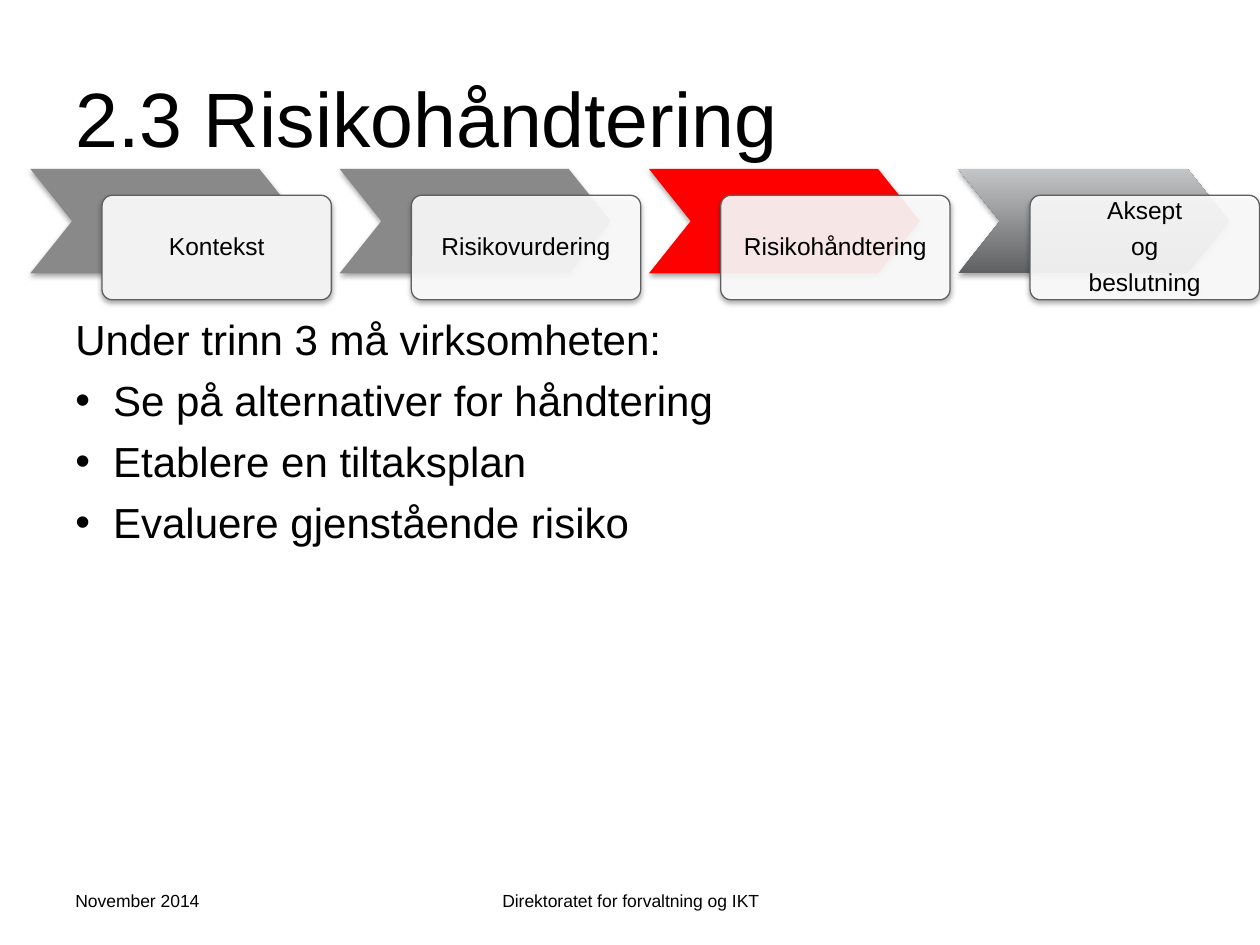
from lxml import etree
from pptx import Presentation
from pptx.dml.color import RGBColor
from pptx.enum.shapes import MSO_SHAPE
from pptx.enum.text import MSO_ANCHOR, PP_ALIGN
from pptx.oxml import parse_xml
from pptx.oxml.ns import nsdecls, qn
from pptx.util import Inches, Pt

CHEVRON, ROUND = MSO_SHAPE.CHEVRON, MSO_SHAPE.ROUNDED_RECTANGLE
LEFT, CENTER = PP_ALIGN.LEFT, PP_ALIGN.CENTER
TOP, MIDDLE = MSO_ANCHOR.TOP, MSO_ANCHOR.MIDDLE

FONT = "Arial"
HEX = {"black": "000000", "white": "FFFFFF", "gray": "898989", "red": "FF0000",
       "dark": "5F6062", "light": "C4C5C6", "pale": "F2F2F2"}

TITLE = "2.3 Risikohåndtering"
STEPS = [
    (["Kontekst"], ["gray"], "pale", 100),
    (["Risikovurdering"], ["gray"], "white", 90),
    (["Risikohåndtering"], ["red"], "white", 90),
    (["Aksept", "og", "beslutning"], ["dark", "light"], "white", 90),
]
INTRO = "Under trinn 3 må virksomheten:"
POINTS = ["Se på alternativer for håndtering", "Etablere en tiltaksplan",
          "Evaluere gjenstående risiko"]
FOOT = [
    ("November 2014", 0.5, 2.33, LEFT),
    ("Direktoratet for forvaltning og IKT", 3.42, 3.17, CENTER),
]

START, STEP = 0.24, 2.455
SHIFT, DROP = 0.57, 0.21
ROW, TALL = 1.34, 0.83


def rgb(name):
    return RGBColor.from_string(HEX[name])


def write(para, text, size, align=LEFT):
    para.alignment = align
    run = para.add_run()
    run.text = text
    run.font.name = FONT
    run.font.size = Pt(size)
    run.font.color.rgb = rgb("black")


def add_box(slide, left, top, width, height, anchor):
    box = slide.shapes.add_textbox(Inches(left), Inches(top), Inches(width), Inches(height))
    frame = box.text_frame
    frame.word_wrap = True
    frame.vertical_anchor = anchor
    return frame


def add_form(slide, kind, left, top, width, adjust):
    form = slide.shapes.add_shape(kind, Inches(left), Inches(top), Inches(width), Inches(TALL))
    form.adjustments[0] = adjust
    form.shadow.inherit = False
    return form


def add_shade(form):
    glow = form._element.spPr.find(qn("a:effectLst"))
    glow.append(parse_xml(
        f'<a:outerShdw {nsdecls("a")} blurRad="{Pt(3.1)}" dist="{Pt(1.8)}" dir="5400000" '
        f'rotWithShape="0"><a:srgbClr val="{HEX["black"]}"><a:alpha val="35000"/>'
        '</a:srgbClr></a:outerShdw>'))


def paint(form, names, alpha=100):
    fill = form.fill
    if len(names) > 1:
        fill.gradient()
        fill.gradient_angle = 90
        for stop, name in zip(fill.gradient_stops, names):
            stop.color.rgb = rgb(name)
        return
    fill.solid()
    fill.fore_color.rgb = rgb(names[0])
    if alpha < 100:
        color = form._element.spPr.find(qn("a:solidFill"))[0]
        etree.SubElement(color, qn("a:alpha"), val=str(alpha * 1000))


def add_step(slide, left, lines, tones, face, alpha):
    arrow = add_form(slide, CHEVRON, left, ROW, 2.15, 0.4)
    paint(arrow, tones)
    arrow.line.fill.background()
    add_shade(arrow)

    card = add_form(slide, ROUND, left + SHIFT, ROW + DROP, 1.82, 0.1)
    paint(card, [face], alpha)
    card.line.color.rgb = rgb("dark")
    card.line.width = Pt(0.75)
    add_shade(card)
    frame = card.text_frame
    frame.word_wrap = True
    frame.vertical_anchor = MIDDLE
    frame.margin_left = frame.margin_right = Inches(0.11)
    frame.margin_top = frame.margin_bottom = Inches(0.11)
    for i, line in enumerate(lines):
        para = frame.add_paragraph() if i else frame.paragraphs[0]
        para.line_spacing = 0.9
        if i < len(lines) - 1:
            para.space_after = Pt(5.5)
        write(para, line, 14, CENTER)


def add_point(frame, text):
    para = frame.add_paragraph()
    props = para._p.get_or_add_pPr()
    props.set("marL", str(Inches(0.3)))
    props.set("indent", str(Inches(-0.3)))
    etree.SubElement(props, qn("a:buFont"), typeface=FONT)
    etree.SubElement(props, qn("a:buChar"), char="•")
    para.space_before = Pt(6)
    write(para, text, 24)


def main():
    deck = Presentation()
    deck.slide_width, deck.slide_height = Inches(10), Inches(7.5)
    slide = deck.slides.add_slide(deck.slide_layouts[5])

    title = slide.shapes.title
    title.left, title.top = Inches(0.5), Inches(0.3)
    title.width, title.height = Inches(9), Inches(1.25)
    title.text_frame.vertical_anchor = MIDDLE
    write(title.text_frame.paragraphs[0], TITLE, 44)

    body = add_box(slide, 0.5, 2.44, 9, 4.95, TOP)
    write(body.paragraphs[0], INTRO, 24)
    for point in POINTS:
        add_point(body, point)

    for text, left, width, align in FOOT:
        frame = add_box(slide, left, 6.95, width, 0.4, MIDDLE)
        write(frame.paragraphs[0], text, 10, align)

    for i, step in enumerate(STEPS):
        add_step(slide, START + i * STEP, *step)

    deck.save("out.pptx")


if __name__ == "__main__":
    main()
